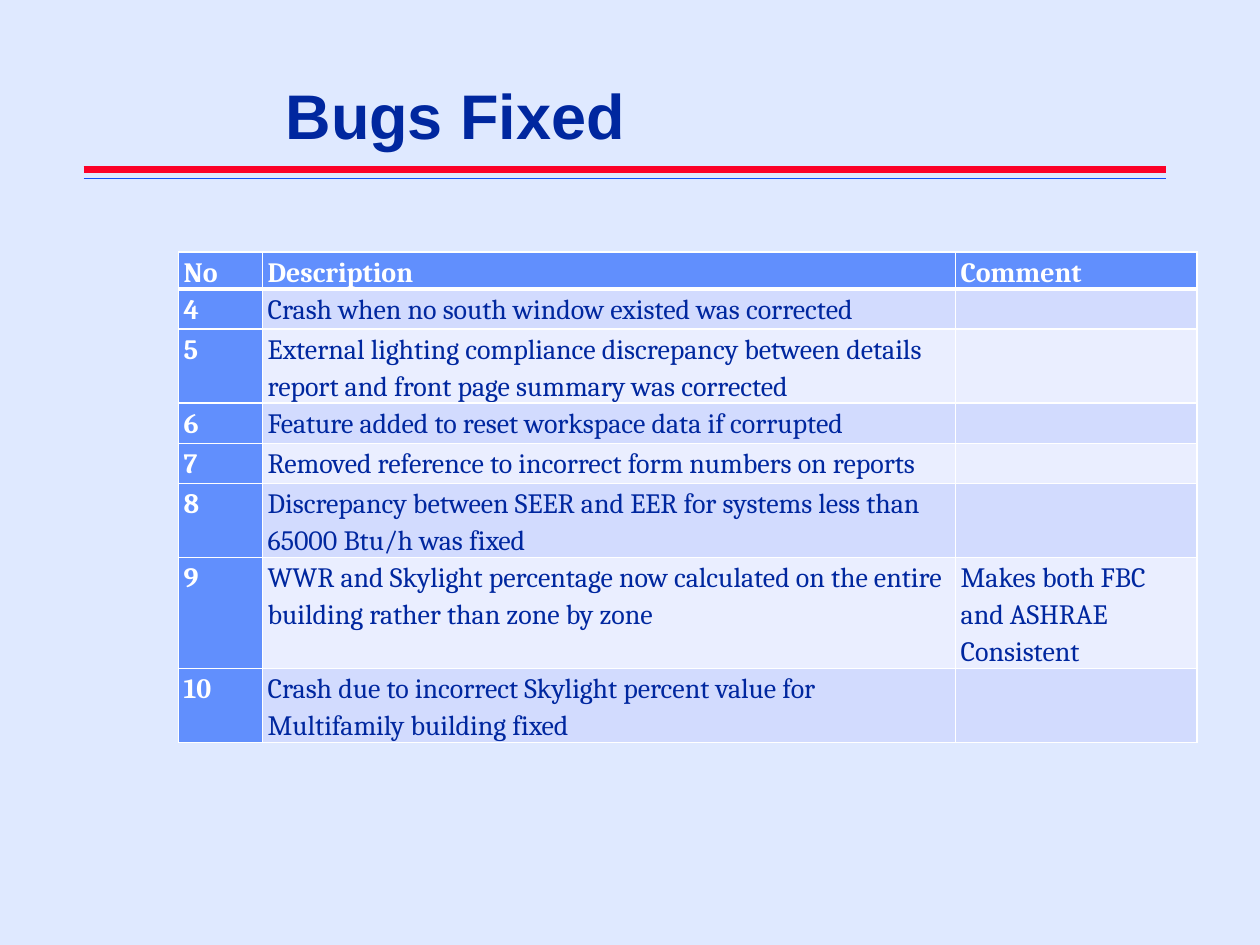
import pptx
import pptx.dml.color
import pptx.enum.shapes
import pptx.enum.text
import pptx.oxml
import pptx.oxml.ns
import pptx.util

Pt = pptx.util.Pt


def paint(target, color):
    if hasattr(target, "solid"):
        target.solid()
        target = target.fore_color
    target.rgb = pptx.dml.color.RGBColor.from_string(color)


def set_format(target, values):
    for name, value in values.items():
        setattr(target, name, value)


NAVY, WHITE, HEADING = "00279F", "FFFFFF", "618FFD"
BANDS = ["D2DBFE", "EAEEFF"]
NAMESPACE = pptx.oxml.ns.nsdecls("a")

deck = pptx.Presentation()
set_format(deck, {"slide_width": Pt(720), "slide_height": Pt(540)})
slide = deck.slides.add_slide(deck.slide_layouts[5])
paint(slide.background.fill, "DFE9FF")

for y, color, width in [(96.8, "FC0128", 4), (102, "114FFB", 1)]:
    rule = slide.shapes.add_connector(
        pptx.enum.shapes.MSO_CONNECTOR.STRAIGHT, Pt(47.8), Pt(y), Pt(666), Pt(y))
    paint(rule.line.fill, color)
    rule.line.width = Pt(width)
    rule._element.spPr.append(pptx.oxml.parse_xml(f"<a:effectLst {NAMESPACE}/>"))

title = slide.shapes.title
set_format(title, {"left": Pt(156), "top": Pt(42), "width": Pt(444), "height": Pt(48)})
title.text_frame.text = "Bugs Fixed"
set_format(title.text_frame, {
    "vertical_anchor": pptx.enum.text.MSO_ANCHOR.MIDDLE,
    "auto_size": pptx.enum.text.MSO_AUTO_SIZE.NONE,
    "word_wrap": True,
})
heading = title.text_frame.paragraphs[0]
set_format(heading, {"alignment": pptx.enum.text.PP_ALIGN.LEFT, "line_spacing": Pt(42)})
set_format(heading.runs[0].font, {"name": "Arial", "size": Pt(36), "bold": True})
paint(heading.runs[0].font.color, NAVY)

bugs = [
    ("No", "Description", "Comment"),
    ("4", "Crash when no south window existed was corrected", ""),
    ("5", "External lighting compliance discrepancy between details report "
          "and front page summary was corrected", ""),
    ("6", "Feature added to reset workspace data if corrupted", ""),
    ("7", "Removed reference to incorrect form numbers on reports", ""),
    ("8", "Discrepancy between SEER and EER for systems less than 65000 Btu/h was fixed", ""),
    ("9", "WWR and Skylight percentage now calculated on the entire building "
          "rather than zone by zone", "Makes both FBC and ASHRAE Consistent"),
    ("10", "Crash due to incorrect Skylight percent value for Multifamily building fixed", ""),
]
column_widths = [48, 396, 138]
row_heights = [21, 23, 42, 23, 23, 42, 63, 42]
bug_table = slide.shapes.add_table(
    len(bugs), len(column_widths), Pt(102), Pt(144),
    Pt(sum(column_widths)), Pt(sum(row_heights))).table
for column, width in zip(bug_table.columns, column_widths):
    column.width = Pt(width)
for row, height in zip(bug_table.rows, row_heights):
    row.height = Pt(height)

cell_margins = {"margin_left": Pt(3), "margin_right": Pt(3), "margin_top": 0, "margin_bottom": 0}
for row_index, bug in enumerate(bugs):
    for column_index, words in enumerate(bug):
        cell = bug_table.cell(row_index, column_index)
        is_heading = row_index == 0 or column_index == 0
        set_format(cell, cell_margins)
        for side in "LRTB":
            thick = (row_index, side) in [(0, "B"), (1, "T")]
            cell._tc.get_or_add_tcPr().append(pptx.oxml.parse_xml(
                f'<a:ln{side} {NAMESPACE} w="{Pt(3 if thick else 1)}"><a:solidFill>'
                f'<a:srgbClr val="{WHITE}"/></a:solidFill></a:ln{side}>'))
        paint(cell.fill, HEADING if is_heading else BANDS[(row_index - 1) % 2])
        cell.text = words
        paragraph = cell.text_frame.paragraphs[0]
        paragraph.line_spacing = 1.15
        for run in paragraph.runs:
            set_format(run.font, {"name": "Cambria", "size": Pt(16), "bold": is_heading})
            paint(run.font.color, WHITE if is_heading else NAVY)

deck.save("out.pptx")
